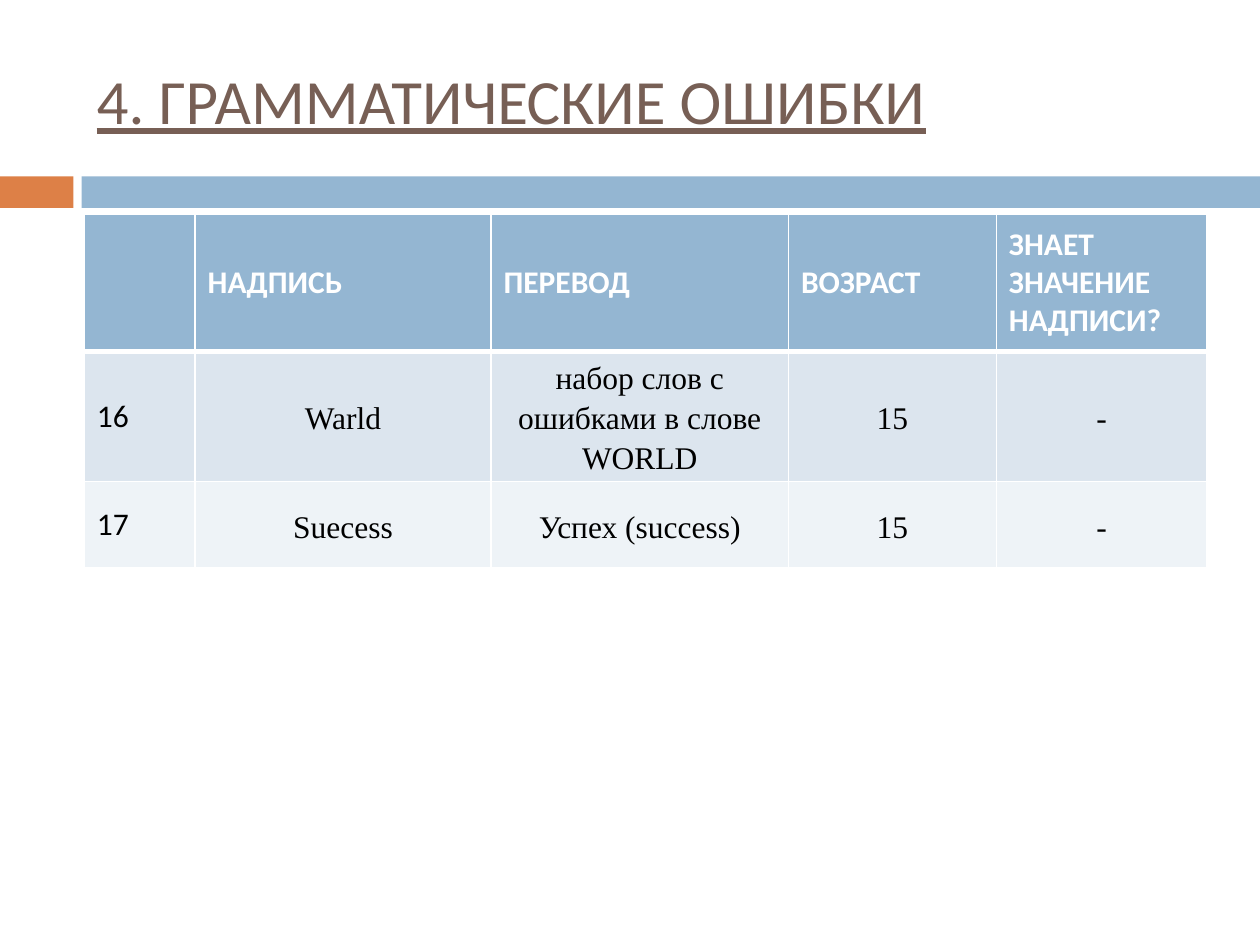
from lxml import etree
from pptx import Presentation
from pptx.dml.color import RGBColor
from pptx.enum.shapes import MSO_SHAPE
from pptx.enum.text import MSO_ANCHOR, PP_ALIGN
from pptx.oxml.ns import qn
from pptx.util import Pt

RECT = MSO_SHAPE.RECTANGLE
MIDDLE = MSO_ANCHOR.MIDDLE
LEFT, CENTER = PP_ALIGN.LEFT, PP_ALIGN.CENTER

ORANGE = RGBColor(0xDD, 0x80, 0x47)
BLUE = RGBColor(0x94, 0xB6, 0xD2)
BROWN = RGBColor(0x77, 0x5F, 0x55)
WHITE = RGBColor(0xFF, 0xFF, 0xFF)
BLACK = RGBColor(0, 0, 0)
BANDS = [RGBColor(0xDC, 0xE5, 0xEE), RGBColor(0xEE, 0xF3, 0xF7)]

SANS, SERIF = "Calibri", "Times New Roman"
WIDTH, HEIGHT = 720, 540
EDGE = 48.2  # left edge of title and table
COLS = [63.3, 169.1, 170, 118.8, 120.3]
ROWS = [78.3, 48.2, 49.5]
DATA = [
    ["", "НАДПИСЬ", "ПЕРЕВОД", "ВОЗРАСТ", "ЗНАЕТ ЗНАЧЕНИЕ НАДПИСИ?"],
    ["16", "Warld", "набор слов с ошибками в слове WORLD", "15", "-"],
    ["17", "Suecess", "Успех (success)", "15", "-"],
]


def add_bar(slide, left, width, color):
    bar = slide.shapes.add_shape(RECT, Pt(left), Pt(100.8), Pt(width), Pt(18))
    bar.shadow.inherit = False
    bar.fill.solid()
    bar.fill.fore_color.rgb = color
    bar.line.fill.background()


def set_font(font, name, size, color):
    font.name = name
    font.size = Pt(size)
    font.color.rgb = color


def add_title(slide, text):
    box = slide.shapes.add_textbox(Pt(EDGE), Pt(18), Pt(642), Pt(78))
    frame = box.text_frame
    frame.word_wrap = True
    frame.vertical_anchor = MIDDLE
    para = frame.paragraphs[0]
    para.text = text
    set_font(para.font, SANS, 36, BROWN)
    para.font.underline = True


def set_borders(cell, bottom):
    props = cell._tc.get_or_add_tcPr()
    widths = {"a:lnL": 1, "a:lnR": 1, "a:lnT": 1, "a:lnB": bottom}
    for spot, (tag, width) in enumerate(widths.items()):
        line = etree.Element(qn(tag), w=str(Pt(width)))
        fill = etree.SubElement(line, qn("a:solidFill"))
        etree.SubElement(fill, qn("a:srgbClr"), val=str(WHITE))
        props.insert(spot, line)


def fill_cell(cell, text, row, col):
    head = row == 0
    entry = not head and col > 0
    cell.fill.solid()
    cell.fill.fore_color.rgb = BLUE if head else BANDS[row - 1]
    set_borders(cell, 3 if head else 1)
    cell.vertical_anchor = MIDDLE
    cell.margin_left = cell.margin_right = Pt(5 if entry else 7.2)
    cell.margin_top = cell.margin_bottom = Pt(0 if entry else 3.6)
    para = cell.text_frame.paragraphs[0]
    para.text = text
    para.alignment = CENTER if entry else LEFT
    if entry:
        para.line_spacing = 1.15
    set_font(para.font, SERIF if entry else SANS, 18, WHITE if head else BLACK)
    para.font.bold = head


def add_grid(slide):
    frame = slide.shapes.add_table(len(ROWS), len(COLS), Pt(EDGE), Pt(122.4),
                                   Pt(sum(COLS)), Pt(sum(ROWS)))
    table = frame.table
    table.horz_banding = False
    for col, width in enumerate(COLS):
        table.columns[col].width = Pt(width)
    for row, height in enumerate(ROWS):
        table.rows[row].height = Pt(height)
        for col, text in enumerate(DATA[row]):
            fill_cell(table.cell(row, col), text, row, col)


def main():
    deck = Presentation()
    deck.slide_width, deck.slide_height = Pt(WIDTH), Pt(HEIGHT)
    slide = deck.slides.add_slide(deck.slide_layouts[6])

    # Two-colour band under the title
    add_bar(slide, 0, 42, ORANGE)
    add_bar(slide, 46.6, WIDTH - 46.6, BLUE)

    # Title and table
    add_title(slide, "4. ГРАММАТИЧЕСКИЕ ОШИБКИ")
    add_grid(slide)

    deck.save("out.pptx")


if __name__ == "__main__":
    main()
